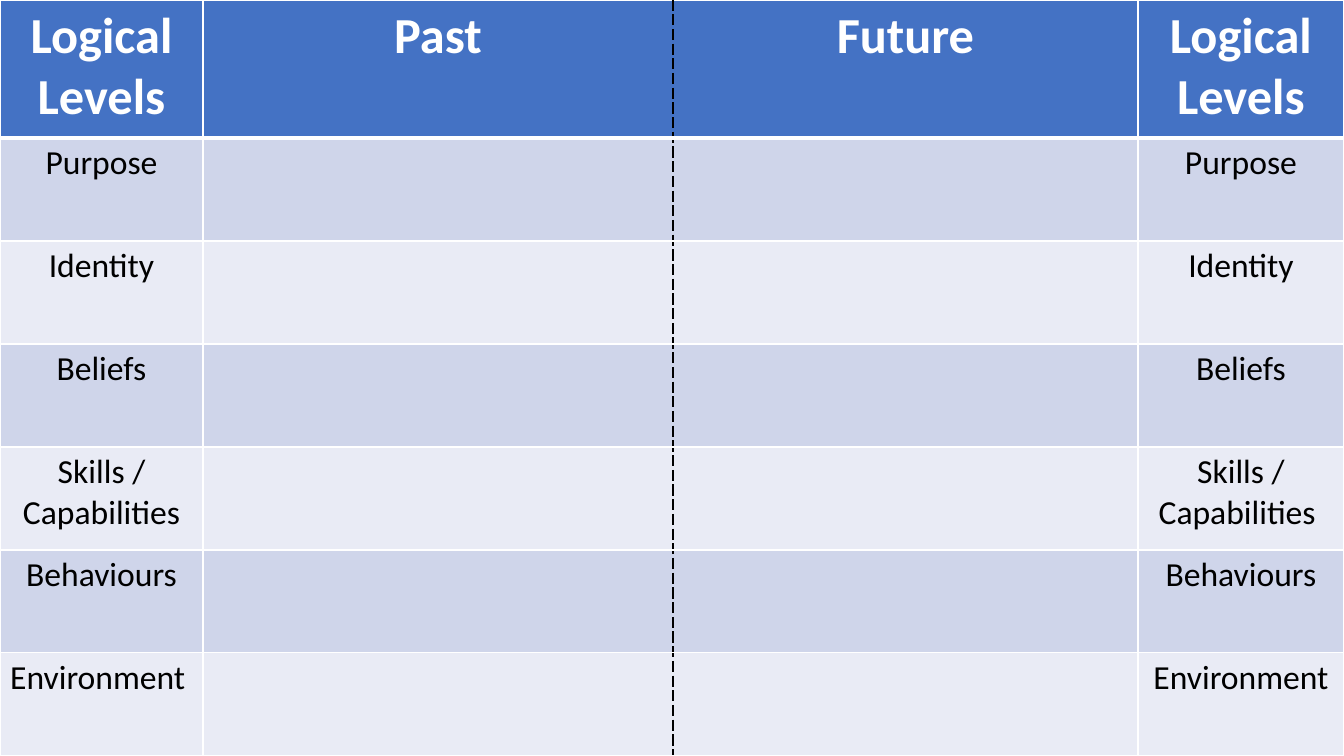
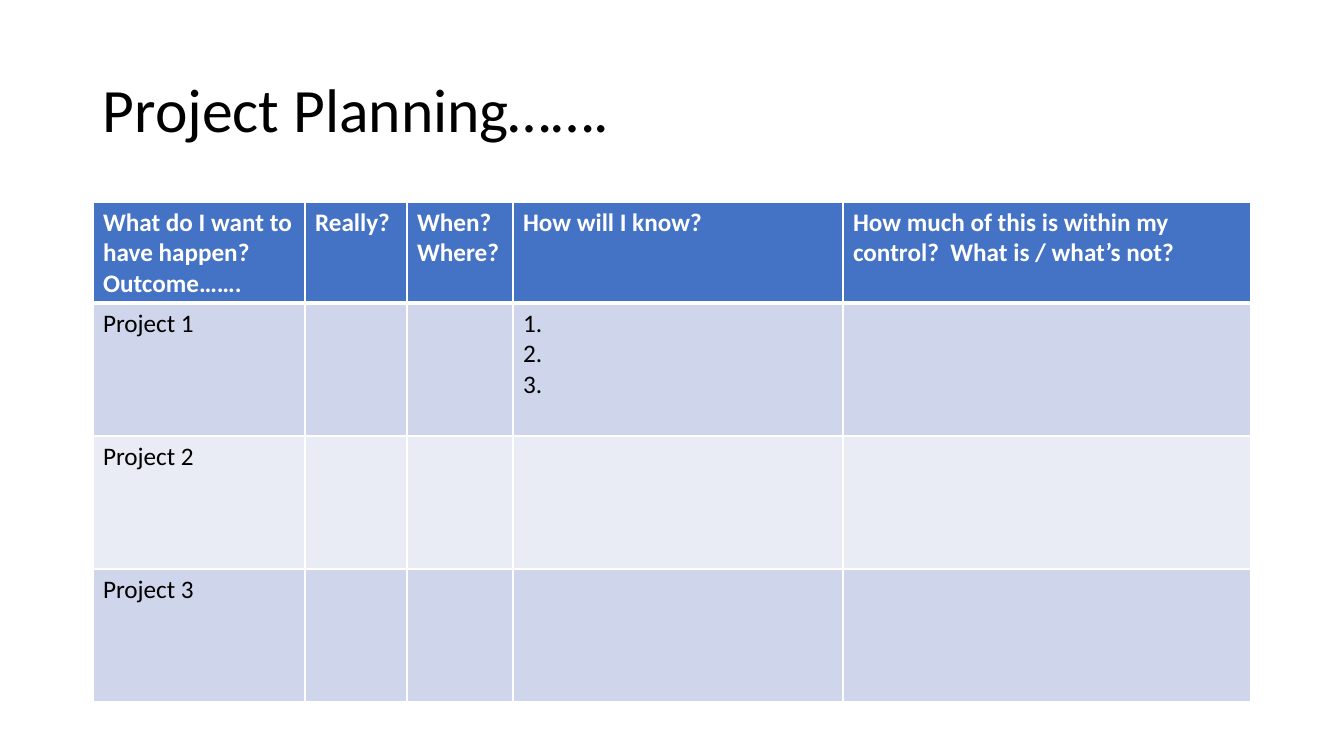
from lxml import etree
from pptx import Presentation
from pptx.dml.color import RGBColor
from pptx.enum.text import MSO_ANCHOR, PP_ALIGN
from pptx.oxml.ns import qn
from pptx.util import Pt

CENTER = PP_ALIGN.CENTER
LEFT = PP_ALIGN.LEFT
MIDDLE = MSO_ANCHOR.MIDDLE
FONT = "Calibri"
SCALE = 914400 / 100.8
HUES = {
    "head": "4472C4",
    "odd": "CFD5EA",
    "even": "E9EBF5",
    "white": "FFFFFF",
    "black": "000000",
}


def px(num):
    return round(num * SCALE)


def add_grid(slide, left, top, cols, rows, texts, sizes, align, split=None):
    frame = slide.shapes.add_table(
        len(rows), len(cols), px(left), px(top), px(sum(cols)), px(sum(rows)))
    table = frame.table
    table.first_row = False
    table.horz_banding = False
    for col, width in zip(table.columns, cols):
        col.width = px(width)
    for row, height in zip(table.rows, rows):
        row.height = px(height)
    for r, line in enumerate(texts):
        band = "head" if r == 0 else "odd" if r % 2 else "even"
        for c, text in enumerate(line):
            cell = table.cell(r, c)
            cell.text = text
            cell.fill.solid()
            cell.fill.fore_color.rgb = RGBColor.from_string(HUES[band])
            for para in cell.text_frame.paragraphs:
                para.alignment = align
                para.font.name = FONT
                para.font.size = Pt(sizes[0] if r == 0 else sizes[1])
                para.font.bold = r == 0
                ink = HUES["white" if r == 0 else "black"]
                para.font.color.rgb = RGBColor.from_string(ink)
            props = cell._tc.get_or_add_tcPr()
            edges = {
                "L": (1, c == split),
                "R": (1, c + 1 == split),
                "T": (3 if r == 1 else 1, False),
                "B": (3 if r == 0 else 1, False),
            }
            for spot, (side, (width, dashed)) in enumerate(edges.items()):
                edge = etree.Element(qn("a:ln" + side), w=str(Pt(width)))
                fill = etree.SubElement(edge, qn("a:solidFill"))
                tint = HUES["black" if dashed else "white"]
                etree.SubElement(fill, qn("a:srgbClr"), val=tint)
                dash = "lgDash" if dashed else "solid"
                etree.SubElement(edge, qn("a:prstDash"), val=dash)
                props.insert(spot, edge)


deck = Presentation()
deck.slide_width = px(1344)
deck.slide_height = px(756)
blank = deck.slide_layouts[6]

slide = deck.slides.add_slide(blank)
levels = [
    ("Logical Levels", "Past", "Future", "Logical Levels"),
    ("Purpose", "", "", "Purpose"),
    ("Identity", "", "", "Identity"),
    ("Beliefs", "", "", "Beliefs"),
    ("Skills / Capabilities", "", "", "Skills / Capabilities "),
    ("Behaviours", "", "", "Behaviours"),
    ("Environment ", "", "", "Environment"),
]
add_grid(slide, 0, 0, [203, 470, 465, 206], [138] + [103] * 6,
         levels, (36, 24), CENTER, split=2)

slide = deck.slides.add_slide(blank)
box = slide.shapes.add_textbox(px(93), px(40), px(1159), px(146))
body = box.text_frame
body.word_wrap = True
body.vertical_anchor = MIDDLE
title = body.paragraphs[0]
title.text = "Project Planning……."
title.line_spacing = 0.9
title.font.name = FONT
title.font.size = Pt(44)
title.font.color.rgb = RGBColor.from_string(HUES["black"])

plans = [
    ("What do I want to have happen?\nOutcome…….", "Really?",
     "When?\nWhere?", "How will I know?",
     "How much of this is within my control?  What is / what’s not?"),
    ("Project 1", "", "", "1.\n2.\n3.", ""),
    ("Project 2", "", "", "", ""),
    ("Project 3", "", "", "", ""),
]
add_grid(slide, 93, 202, [212, 102, 106, 330, 408], [101] + [133] * 3,
         plans, (18, 18), LEFT)

deck.save("out.pptx")
